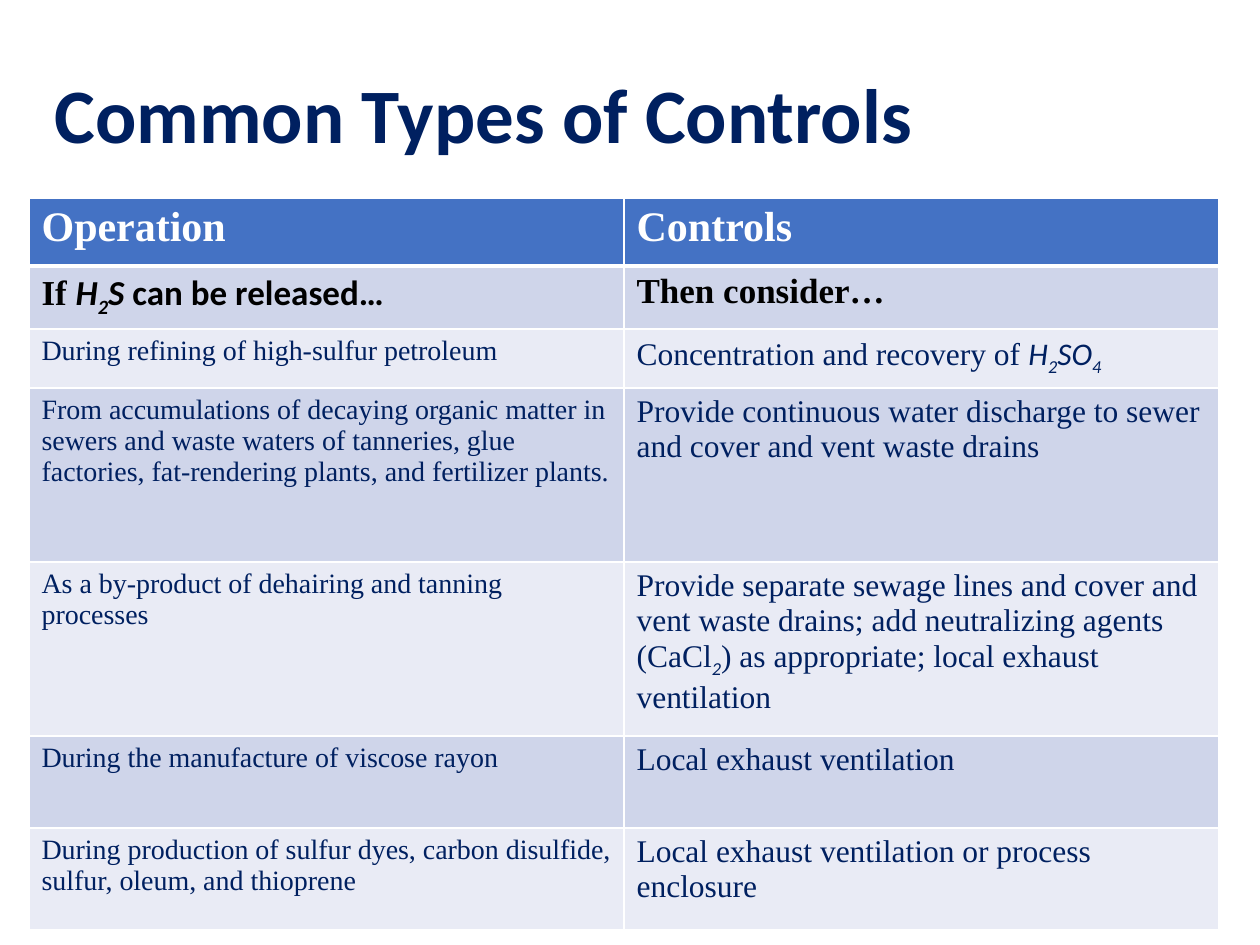
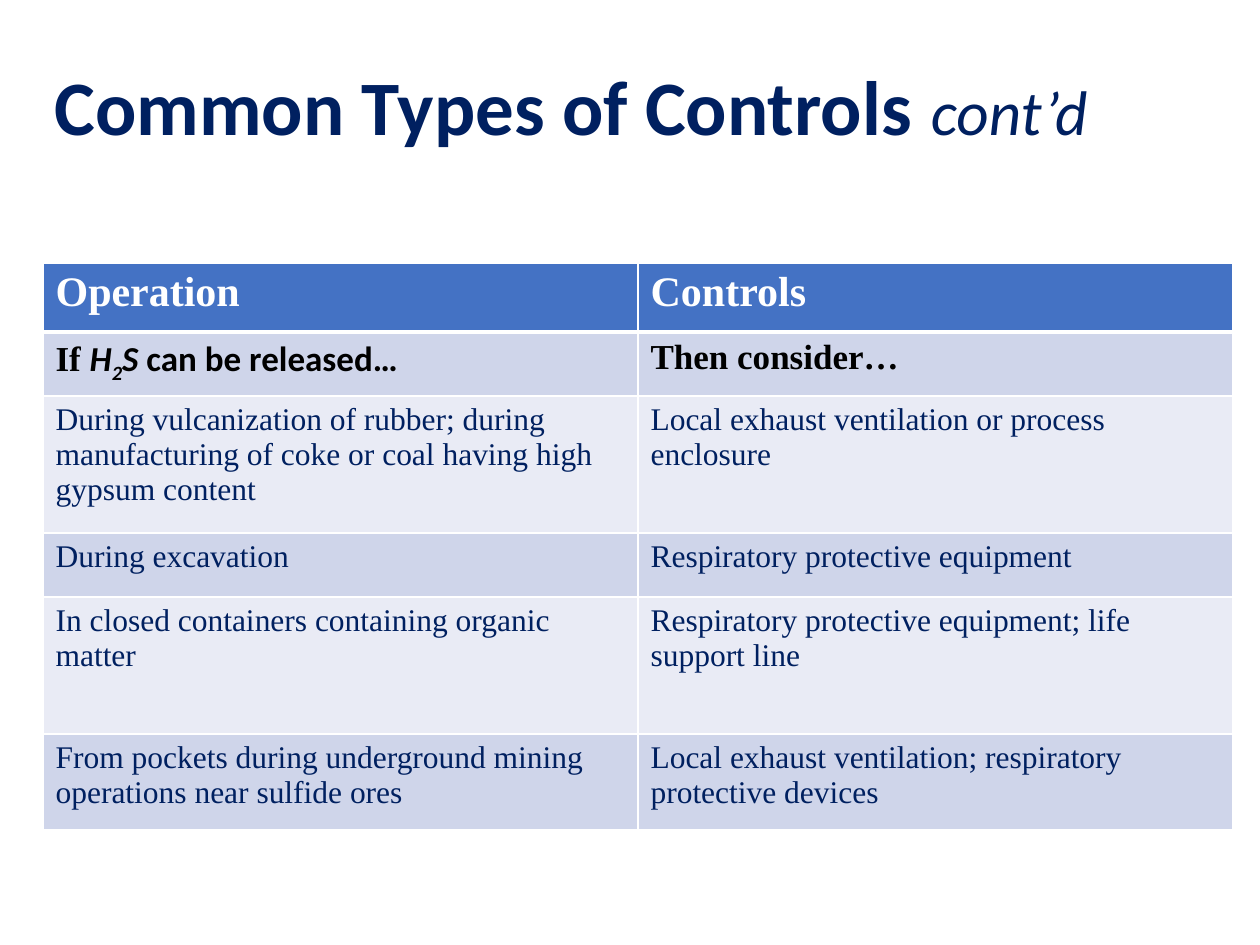
from lxml.etree import SubElement
from pptx import Presentation
from pptx.dml.color import RGBColor
from pptx.enum.text import MSO_ANCHOR, MSO_AUTO_SIZE, PP_ALIGN
from pptx.oxml.ns import qn
from pptx.util import Emu, Pt

# Shared look
PX = 914400 / 126
NAVY, WHITE, BLACK = "002060", "FFFFFF", "000000"
HEADER_FILL, BAND_FILLS = "4472C4", ("E9EBF5", "CFD5EA")
SERIF, SANS = "Times New Roman", "Calibri"
COLUMN_WIDTH = 595

# A run is (text, kind); each kind gives its font, italic and subscript
KINDS = {
    "plain": (SERIF, False, False),
    "sans": (SANS, False, False),
    "formula": (SANS, True, False),
    "sub": (SANS, True, True),
}

# Content: a cell is a string or a list of runs
HEADER_ROWS = [
    ("Operation", "Controls"),
    (
        [("If ", "plain"), ("H", "formula"), ("2", "sub"), ("S", "formula"),
         (" can be released…", "sans")],
        "Then consider…",
    ),
]
PAGES = [
    {
        "title": [("Common Types of Controls", 44, True)],
        "title_top": 40,
        "table_at": (29, 198),
        "row_heights": (68, 63, 59, 174, 174, 92, 102),
        "body_sizes": (16, 18),
        "rows": [
            ("During refining of high-sulfur petroleum",
             [("Concentration and recovery of ", "plain"), ("H", "formula"),
              ("2", "sub"), ("SO", "formula"), ("4", "sub")]),
            ("From accumulations of decaying organic matter in sewers and waste "
             "waters of tanneries, glue factories, fat-rendering plants, and "
             "fertilizer plants.",
             "Provide continuous water discharge to sewer and cover and vent "
             "waste drains"),
            ("As a by-product of dehairing and tanning processes",
             [("Provide separate sewage lines and cover and vent waste drains; "
               "add neutralizing agents (CaCl", "plain"), ("2", "sub"),
              (") as appropriate; local exhaust ventilation", "plain")]),
            ("During the manufacture of viscose rayon",
             "Local exhaust ventilation"),
            ("During production of sulfur dyes, carbon disulfide, sulfur, oleum, "
             "and thioprene",
             "Local exhaust ventilation or process enclosure"),
        ],
    },
    {
        "title": [("Common Types of Controls ", 44, True), ("cont’d", 36, False)],
        "title_top": 32,
        "table_at": (43, 263),
        "row_heights": (69, 64, 137, 64, 137, 96),
        "body_sizes": (18, 18),
        "rows": [
            ("During vulcanization of rubber; during manufacturing of coke or "
             "coal having high gypsum content",
             "Local exhaust ventilation or process enclosure"),
            ("During excavation", "Respiratory protective equipment"),
            ("In closed containers containing organic matter",
             "Respiratory protective equipment; life support line"),
            ("From pockets during underground mining operations near sulfide ores",
             "Local exhaust ventilation; respiratory protective devices"),
        ],
    },
]


def px(length):
    return Emu(round(length * PX))


def color(hex_code):
    return RGBColor.from_string(hex_code)


def add_run(para, text, font, size, hex_code, bold=False, italic=False):
    span = para.add_run()
    span.text = text
    span.font.name, span.font.size = font, Pt(size)
    span.font.bold, span.font.italic = bold, italic
    span.font.color.rgb = color(hex_code)
    return span


def add_title(page, runs, top):
    box = page.shapes.title
    box.left, box.top, box.width, box.height = px(42), px(top), px(1134), px(157)
    frame = box.text_frame
    frame.word_wrap, frame.auto_size = True, MSO_AUTO_SIZE.NONE
    frame.vertical_anchor = MSO_ANCHOR.MIDDLE
    para = frame.paragraphs[0]
    para.alignment, para.line_spacing = PP_ALIGN.LEFT, 0.9
    for text, size, main in runs:
        add_run(para, text, SANS, size, NAVY, bold=main, italic=not main)


def add_borders(cell, bottom):
    properties = cell._tc.get_or_add_tcPr()
    for side, width in (("L", 1), ("R", 1), ("T", 1), ("B", bottom)):
        line = SubElement(properties, qn(f"a:ln{side}"), w=str(Pt(width)))
        fill = SubElement(line, qn("a:solidFill"))
        SubElement(fill, qn("a:srgbClr"), val=WHITE)


def fill_cell(cell, content, row, body_size):
    # The two heading rows are bold, the rest is navy body text
    size, hex_code = {0: (24, WHITE), 1: (20, BLACK)}.get(row, (body_size, NAVY))
    add_borders(cell, bottom=1 if row else 3)
    cell.fill.solid()
    cell.fill.fore_color.rgb = color(BAND_FILLS[row % 2] if row else HEADER_FILL)
    para = cell.text_frame.paragraphs[0]
    runs = [(content, "plain")] if isinstance(content, str) else content
    for text, kind in runs:
        font, italic, subscript = KINDS[kind]
        span = add_run(para, text, font, size, hex_code, row < 2, italic)
        if subscript:
            span._r.get_or_add_rPr().set("baseline", "-25000")


def add_controls_table(page, rows, at, heights, body_sizes):
    left, top = at
    table = page.shapes.add_table(
        len(rows), 2, px(left), px(top), px(2 * COLUMN_WIDTH), px(sum(heights))
    ).table
    for column in table.columns:
        column.width = px(COLUMN_WIDTH)
    for row, (contents, height) in enumerate(zip(rows, heights)):
        table.rows[row].height = px(height)
        for column, content in enumerate(contents):
            fill_cell(table.cell(row, column), content, row, body_sizes[column])


def main():
    deck = Presentation()
    deck.slide_width, deck.slide_height = px(1260), px(945)
    for content in PAGES:
        page = deck.slides.add_slide(deck.slide_layouts[5])
        add_title(page, content["title"], content["title_top"])
        add_controls_table(page, HEADER_ROWS + content["rows"], content["table_at"],
                           content["row_heights"], content["body_sizes"])
    deck.save("out.pptx")


if __name__ == "__main__":
    main()
